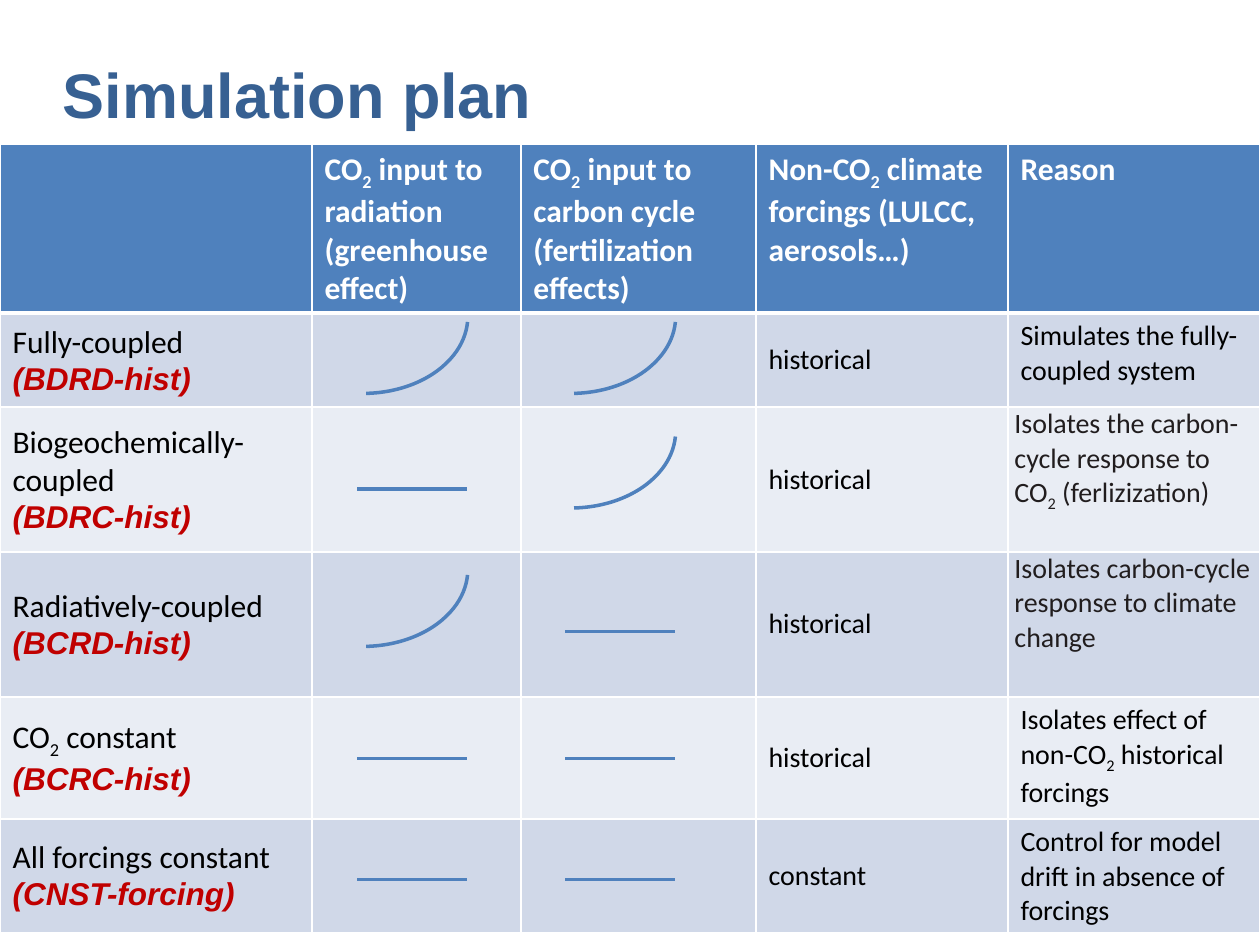
from dataclasses import dataclass

from lxml import etree
from pptx import Presentation
from pptx.dml.color import RGBColor
from pptx.enum.shapes import MSO_CONNECTOR as CONN, MSO_SHAPE as SHAPE
from pptx.enum.text import MSO_ANCHOR as ANCHOR
from pptx.oxml.ns import qn
from pptx.util import Cm, Pt

COLORS = {
    "title": "376092", "header": "4F81BD", "curve": "4F81BD", "border": "FFFFFF",
    "odd": "D0D8E8", "even": "E9EDF4", "white": "FFFFFF", "black": "000000",
    "code": "C00000", "soft": "211D1E",
}


@dataclass
class Style:
    size: int
    color: str
    font: str = "Calibri"
    bold: bool = False
    italic: bool = False


@dataclass
class Experiment:
    name: str
    code: str
    forcing: str
    reason: str
    height: float
    tight: bool = False  # narrow margins around the reason


TITLE = Style(36, "title", "Arial", bold=True)
HEAD = Style(18, "white", bold=True)
NAME = Style(18, "black")
CODE = Style(18, "code", "Arial", bold=True, italic=True)
BODY = Style(16, "black")
SOFT = Style(16, "soft")

# Text between tildes is subscript
HEADERS = [
    "",
    "CO~2~ input to radiation (greenhouse effect)",
    "CO~2~ input to carbon cycle (fertilization effects)",
    "Non-CO~2~ climate forcings (LULCC, aerosols…)",
    "Reason",
]
EXPERIMENTS = [
    Experiment("Fully-coupled", "(BDRD-hist)", "historical",
               "Simulates the fully-coupled system", 1.9),
    Experiment("Biogeochemically-coupled", "(BDRC-hist)", "historical",
               "Isolates the carbon-cycle response to CO~2~ (ferlizization)", 2.92, True),
    Experiment("Radiatively-coupled", "(BCRD-hist)", "historical",
               "Isolates carbon-cycle response to climate change", 2.92, True),
    Experiment("CO~2~ constant", "(BCRC-hist)", "historical",
               "Isolates effect of non-CO~2~ historical forcings", 2.46),
    Experiment("All forcings constant", "(CNST-forcing)", "constant",
               "Control for model drift in absence of forcings", 1.12),
]
COL_WIDTHS = [6.29, 4.21, 4.74, 5.08, 5.08]
HEADER_HEIGHT = 2.72

# Symbols: left edge of each symbol column, then (column left, top)
RADIATION, CARBON = 5.21, 9.4
RISING = [(RADIATION, 4.83), (CARBON, 4.83), (CARBON, 7.14), (RADIATION, 9.93)]
CONSTANT = [(RADIATION, 9.86), (CARBON, 12.73), (RADIATION, 15.29),
            (CARBON, 15.29), (RADIATION, 17.73), (CARBON, 17.73)]


def rgb(name: str) -> RGBColor:
    return RGBColor.from_string(COLORS[name])


def write(p, text: str, style: Style) -> None:
    for i, part in enumerate(text.split("~")):
        if not part:
            continue
        r = p.add_run()
        r.text = part
        f = r.font
        f.name, f.size = style.font, Pt(style.size)
        f.bold, f.italic = style.bold, style.italic
        f.color.rgb = rgb(style.color)
        if i % 2:
            r._r.get_or_add_rPr().set("baseline", "-25000")


def set_borders(cell, bottom: float = 1, top: float = 1) -> None:
    tc_pr = cell._tc.get_or_add_tcPr()
    widths = {"a:lnL": 1, "a:lnR": 1, "a:lnT": top, "a:lnB": bottom}
    for i, (tag, width) in enumerate(widths.items()):
        ln = etree.Element(qn(tag), w=str(Pt(width)))
        fill = etree.SubElement(ln, qn("a:solidFill"))
        etree.SubElement(fill, qn("a:srgbClr"), val=COLORS["border"])
        tc_pr.insert(i, ln)


def paint(cell, fill: str) -> None:
    cell.fill.solid()
    cell.fill.fore_color.rgb = rgb(fill)


def add_title(slide, text: str) -> None:
    sp = slide.shapes.add_textbox(Cm(1.27), Cm(0.74), Cm(22.86), Cm(1.9))
    tf = sp.text_frame
    tf.word_wrap = True
    tf.vertical_anchor = ANCHOR.BOTTOM
    tf.margin_left = tf.margin_right = tf.margin_top = tf.margin_bottom = 0
    write(tf.paragraphs[0], text, TITLE)


def add_plan(slide) -> None:
    heights = [HEADER_HEIGHT] + [e.height for e in EXPERIMENTS]
    table = slide.shapes.add_table(len(heights), len(COL_WIDTHS), 0, Cm(2.9),
                                   Cm(sum(COL_WIDTHS)), Cm(sum(heights))).table
    for col, width in zip(table.columns, COL_WIDTHS):
        col.width = Cm(width)
    for row, height in zip(table.rows, heights):
        row.height = Cm(height)

    # Header row
    for cell, text in zip(table.rows[0].cells, HEADERS):
        paint(cell, "header")
        set_borders(cell, bottom=3)
        write(cell.text_frame.paragraphs[0], text, HEAD)

    # One row per experiment
    for n, exp in enumerate(EXPERIMENTS, start=1):
        cells = list(table.rows[n].cells)
        for cell in cells:
            paint(cell, "odd" if n % 2 else "even")
            set_borders(cell, top=3 if n == 1 else 1)
        label, forcing, reason = cells[0], cells[3], cells[4]
        label.vertical_anchor = forcing.vertical_anchor = ANCHOR.MIDDLE
        write(label.text_frame.paragraphs[0], exp.name, NAME)
        write(label.text_frame.add_paragraph(), exp.code, CODE)
        write(forcing.text_frame.paragraphs[0], exp.forcing, BODY)
        write(reason.text_frame.paragraphs[0], exp.reason, SOFT if exp.tight else BODY)
        if exp.tight:
            reason.margin_left = reason.margin_right = Cm(0.13)
            reason.margin_top = reason.margin_bottom = 0


def add_rising(slide, left: float, top: float) -> None:
    sp = slide.shapes.add_shape(SHAPE.ARC, Cm(left), Cm(top), Cm(4.22), Cm(3.1))
    sp.rotation = 180
    sp.adjustments[0], sp.adjustments[1] = 109.79, 160.63
    sp.shadow.inherit = False
    sp.fill.background()
    sp.line.color.rgb = rgb("curve")
    sp.line.width = Pt(2)


def add_constant(slide, left: float, y: float) -> None:
    line = slide.shapes.add_connector(CONN.STRAIGHT, Cm(left + 1.99), Cm(y),
                                      Cm(left + 4.2), Cm(y))
    line.line.color.rgb = rgb("curve")
    line.line.width = Pt(2)
    etree.SubElement(line._element.spPr, qn("a:effectLst"))


def main() -> None:
    prs = Presentation()
    prs.slide_width, prs.slide_height = Cm(25.4), Cm(19.05)
    slide = prs.slides.add_slide(prs.slide_layouts[6])
    add_title(slide, "Simulation plan")
    add_plan(slide)
    for left, top in RISING:
        add_rising(slide, left, top)
    for left, y in CONSTANT:
        add_constant(slide, left, y)
    prs.save("out.pptx")


if __name__ == "__main__":
    main()
